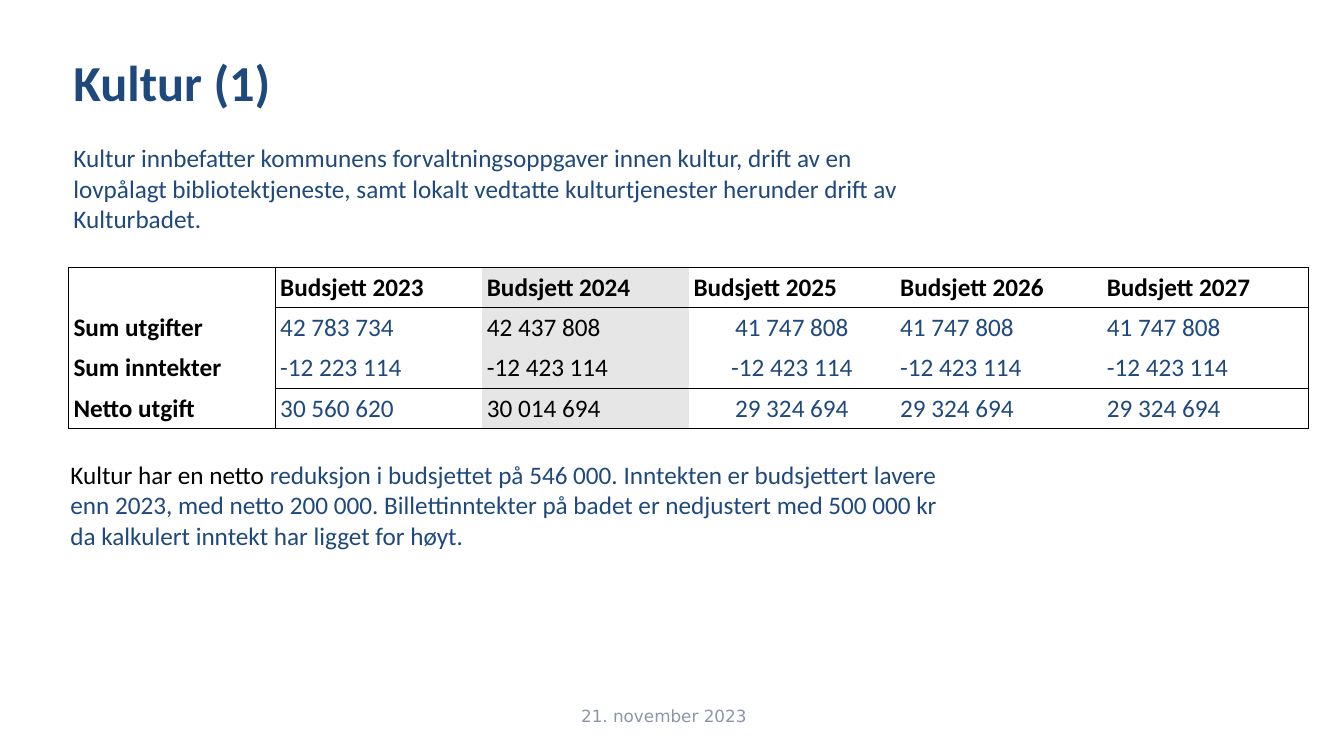
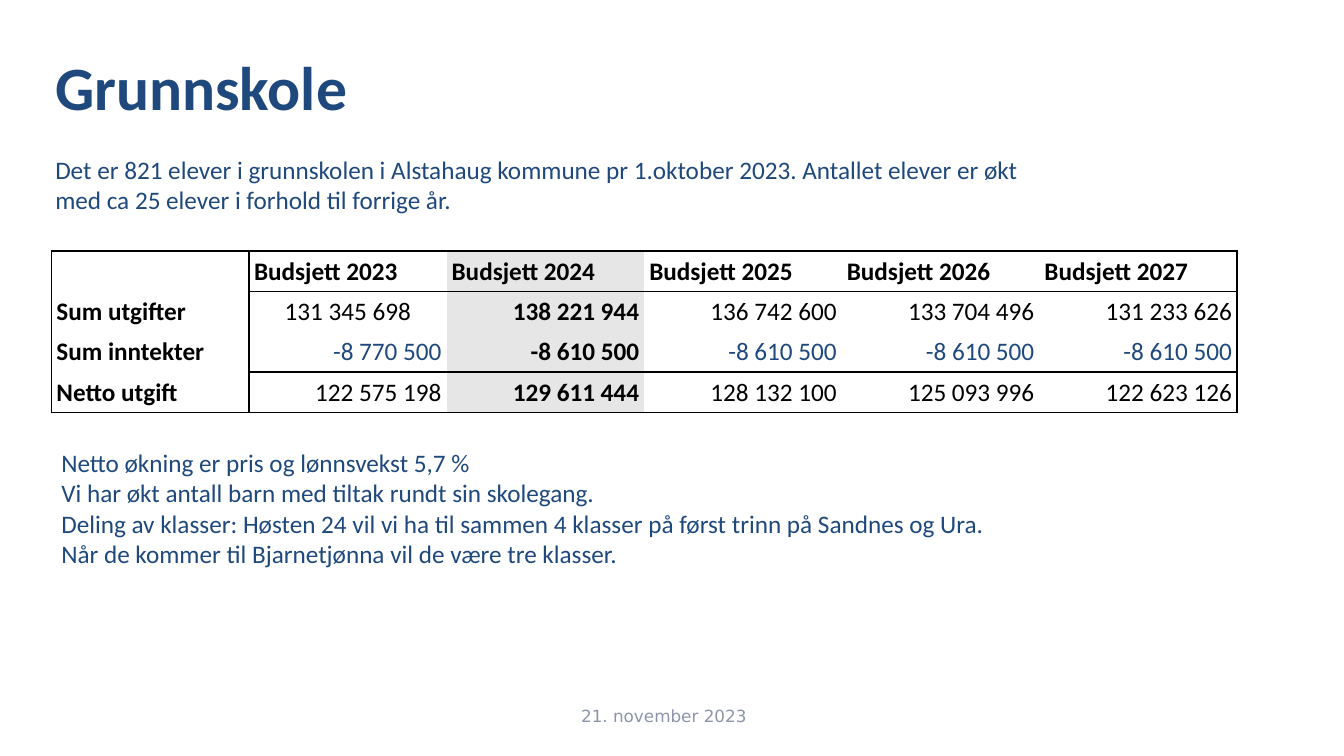
from lxml.etree import SubElement
from pptx import Presentation
from pptx.dml.color import RGBColor
from pptx.enum.text import MSO_ANCHOR as ANCHOR, PP_ALIGN as ALIGN
from pptx.oxml.ns import qn
from pptx.util import Inches, Pt

COLORS = {"blue": "1F497D", "black": "000000", "grey": "E7E6E6", "footer": "8D95AA"}
FONT, FOOTER_FONT = "Calibri", "DejaVu Sans"
BODY_SIZE = 18
FOOTER = "21. november 2023"
FOOTER_BOX = (5.03, 6.9, 3.11, 0.4)
HEADER = ["", "Budsjett 2023", "Budsjett 2024", "Budsjett 2025", "Budsjett 2026", "Budsjett 2027"]
LABELS = ["Sum utgifter", "Sum inntekter", "Netto utgift"]
CURRENT = 2
ROW_HEIGHT = 0.4
CELL_MARGIN = 0.05

SLIDES = [
    {
        "title": "Kultur (1)",
        "title_size": 36,
        "intro": "Kultur innbefatter kommunens forvaltningsoppgaver innen kultur, drift av en "
                 "lovpålagt bibliotektjeneste, samt lokalt vedtatte kulturtjenester herunder "
                 "drift av Kulturbadet.",
        "intro_box": (0.63, 0.46, 8.82, 1.92),
        "table_at": (0.68, 2.65),
        "col_width": 2.05,
        "values": [
            ["42 783 734", "42 437 808", "41 747 808", "41 747 808", "41 747 808"],
            ["-12 223 114", "-12 423 114", "-12 423 114", "-12 423 114", "-12 423 114"],
            ["30 560 620", "30 014 694", "29 324 694", "29 324 694", "29 324 694"],
        ],
        "align": ALIGN.LEFT,
        "centred": [(1, 3), (2, 3), (3, 3)],
        "blue_rows": [1, 2, 3],
        "bold_current": False,
        "notes_box": (0.6, 4.51, 8.9, 1.01),
        "notes": [[
            ("Kultur har en netto ", "black"),
            ("reduksjon i budsjettet på 546 000. Inntekten er budsjettert lavere enn 2023, "
             "med netto 200 000. Billettinntekter på badet er nedjustert med 500 000 kr "
             "da kalkulert inntekt har ligget for høyt.", "blue"),
        ]],
    },
    {
        "title": "Grunnskole",
        "title_size": 44,
        "intro": "Det er 821 elever i grunnskolen i Alstahaug kommune pr 1.oktober 2023. "
                 "Antallet elever er økt med ca 25 elever i forhold til forrige år.",
        "intro_box": (0.45, 0.44, 9.84, 1.75),
        "table_at": (0.51, 2.49),
        "col_width": 1.96,
        "values": [
            ["131 345 698", "138 221 944", "136 742 600", "133 704 496", "131 233 626"],
            ["-8 770 500", "-8 610 500", "-8 610 500", "-8 610 500", "-8 610 500"],
            ["122 575 198", "129 611 444", "128 132 100", "125 093 996", "122 623 126"],
        ],
        "align": ALIGN.RIGHT,
        "centred": [(1, 1)],
        "blue_rows": [2],
        "bold_current": True,
        "notes_box": (0.51, 4.39, 11.74, 1.62),
        "notes": [
            [("Netto økning er pris og lønnsvekst 5,7 %", "blue")],
            [("Vi har økt antall barn med tiltak rundt sin skolegang.", "blue")],
            [("Deling av klasser: Høsten 24 vil vi ha til sammen 4 klasser på først trinn "
              "på Sandnes og Ura.", "blue")],
            [("Når de kommer til Bjarnetjønna vil de være tre klasser.", "blue")],
        ],
    },
]


def rgb(name):
    return RGBColor.from_string(COLORS[name])


def style(font, color, size=BODY_SIZE, bold=False, name=FONT):
    font.name, font.size, font.bold = name, Pt(size), bold
    font.color.rgb = rgb(color)


def add_textbox(s, box):
    tf = s.shapes.add_textbox(*map(Inches, box)).text_frame
    tf.word_wrap = True
    return tf


def add_footer(s):
    tf = add_textbox(s, FOOTER_BOX)
    tf.text = FOOTER
    tf.vertical_anchor = ANCHOR.MIDDLE
    p = tf.paragraphs[0]
    p.alignment = ALIGN.CENTER
    style(p.runs[0].font, "footer", 12, name=FOOTER_FONT)


def add_intro(s, data):
    tf = add_textbox(s, data["intro_box"])
    tf.text = data["title"]
    style(tf.paragraphs[0].runs[0].font, "blue", data["title_size"], True)
    p = tf.add_paragraph()
    p.text = data["intro"]
    p.space_before = Pt(22)
    style(p.runs[0].font, "blue")


def add_notes(s, data):
    tf = add_textbox(s, data["notes_box"])
    for i, parts in enumerate(data["notes"]):
        p = tf.add_paragraph() if i else tf.paragraphs[0]
        for text, color in parts:
            r = p.add_run()
            r.text = text
            style(r.font, color)


def set_borders(cell, row, col):
    def ruled(edge):
        return edge in (0, 4) or (col > 0 and edge in (1, 3))

    sides = {
        "a:lnL": col in (0, 1),
        "a:lnR": col in (0, len(HEADER) - 1),
        "a:lnT": ruled(row),
        "a:lnB": ruled(row + 1),
    }
    tcPr = cell._tc.get_or_add_tcPr()
    for tag, visible in sides.items():
        ln = SubElement(tcPr, qn(tag), w=str(Pt(1)))
        if visible:
            fill = SubElement(ln, qn("a:solidFill"))
            SubElement(fill, qn("a:srgbClr"), val=COLORS["black"])
        else:
            SubElement(ln, qn("a:noFill"))


def fill_cell(cell, text, row, col, data):
    cell.margin_left = cell.margin_right = Inches(CELL_MARGIN)
    cell.margin_top = cell.margin_bottom = Inches(CELL_MARGIN)
    set_borders(cell, row, col)
    if col == CURRENT:
        cell.fill.solid()
        cell.fill.fore_color.rgb = rgb("grey")
    else:
        cell.fill.background()
    heading = row == 0 or col == 0
    cell.vertical_anchor = ANCHOR.BOTTOM if heading else ANCHOR.TOP
    cell.text = text
    p = cell.text_frame.paragraphs[0]
    if not heading:
        p.alignment = ALIGN.CENTER if (row, col) in data["centred"] else data["align"]
    blue = not heading and col != CURRENT and row in data["blue_rows"]
    bold = heading or (col == CURRENT and data["bold_current"])
    style(p.font, "black")
    for r in p.runs:
        style(r.font, "blue" if blue else "black", bold=bold)


def add_budget(s, data):
    rows = [HEADER] + [[label] + values for label, values in zip(LABELS, data["values"])]
    size = (data["col_width"] * len(HEADER), ROW_HEIGHT * len(rows))
    table = s.shapes.add_table(len(rows), len(HEADER),
                               *map(Inches, data["table_at"] + size)).table
    table.first_row = table.horz_banding = False
    for column in table.columns:
        column.width = Inches(data["col_width"])
    for i, values in enumerate(rows):
        table.rows[i].height = Inches(ROW_HEIGHT)
        for j, text in enumerate(values):
            fill_cell(table.cell(i, j), text, i, j, data)


def main():
    prs = Presentation()
    prs.slide_width, prs.slide_height = Inches(13.33), Inches(7.5)
    for data in SLIDES:
        s = prs.slides.add_slide(prs.slide_layouts[6])
        add_footer(s)
        add_intro(s, data)
        add_budget(s, data)
        add_notes(s, data)
    prs.save("out.pptx")


if __name__ == "__main__":
    main()
